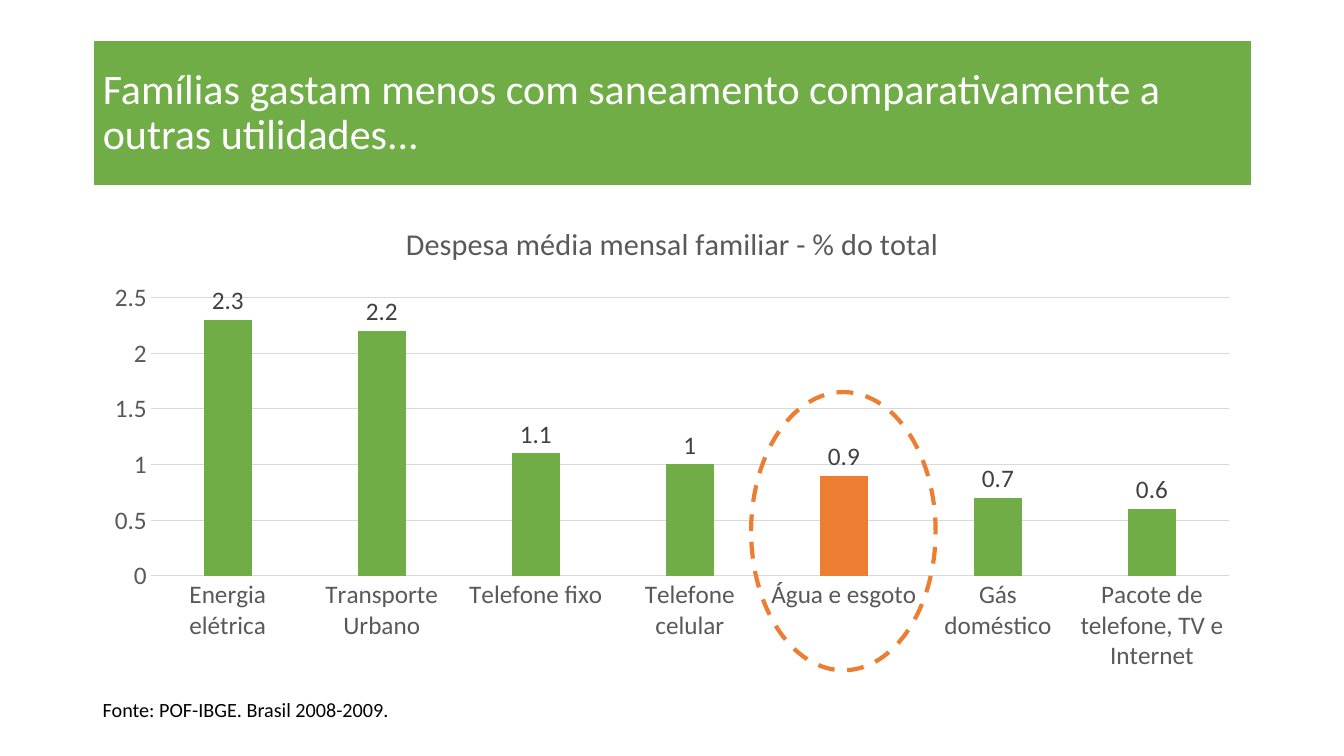
from lxml import etree
from pptx import Presentation
from pptx.chart.data import CategoryChartData
from pptx.dml.color import RGBColor
from pptx.enum.chart import XL_CHART_TYPE, XL_LABEL_POSITION, XL_TICK_MARK
from pptx.enum.dml import MSO_LINE
from pptx.enum.shapes import MSO_SHAPE
from pptx.enum.text import MSO_ANCHOR
from pptx.oxml import parse_xml
from pptx.oxml.ns import nsdecls, qn
from pptx.util import Inches, Pt

COLUMNS = XL_CHART_TYPE.COLUMN_CLUSTERED
OUTSIDE_END = XL_LABEL_POSITION.OUTSIDE_END
NO_TICKS = XL_TICK_MARK.NONE
DASH = MSO_LINE.DASH
OVAL = MSO_SHAPE.OVAL
MIDDLE, TOP = MSO_ANCHOR.MIDDLE, MSO_ANCHOR.TOP

GREEN = RGBColor(0x70, 0xAD, 0x47)
ORANGE = RGBColor(0xED, 0x7D, 0x31)
WHITE = RGBColor(0xFF, 0xFF, 0xFF)
BLACK = RGBColor(0x00, 0x00, 0x00)
AXIS_GRAY = RGBColor(0x59, 0x59, 0x59)
LABEL_GRAY = RGBColor(0x40, 0x40, 0x40)
GRID_GRAY = RGBColor(0xD9, 0xD9, 0xD9)

LEFT, CONTENT_WIDTH = 0.92, 11.5
HIGHLIGHT = "Água e esgoto"
EXPENSES = {
    "Energia elétrica": 2.3,
    "Transporte Urbano": 2.2,
    "Telefone fixo": 1.1,
    "Telefone celular": 1,
    HIGHLIGHT: 0.9,
    "Gás doméstico": 0.7,
    "Pacote de telefone, TV e Internet": 0.6,
}
PLOT_AREA = {"x": 0.05, "y": 0.2, "w": 0.93, "h": 0.58}


def set_font(font, size, color):
    for name, value in {"name": "Calibri", "size": Pt(size), "bold": False}.items():
        setattr(font, name, value)
    font.color.rgb = color


def set_line(line, color, width):
    line.color.rgb = color
    line.width = Pt(width)


def write_text(shape, text, size, color, anchor):
    frame = shape.text_frame
    margins = {"margin_left": 0.1, "margin_right": 0.1, "margin_top": 0.05, "margin_bottom": 0.05}
    for name, value in margins.items():
        setattr(frame, name, Inches(value))
    frame.word_wrap = True
    frame.vertical_anchor = anchor
    paragraph = frame.paragraphs[0]
    paragraph.text = text
    paragraph.line_spacing = 0.9
    set_font(paragraph.font, size, color)


def add_title(slide, text):
    title = slide.shapes.title
    box = {"left": LEFT, "top": 0.4, "width": CONTENT_WIDTH, "height": 1.45}
    for name, value in box.items():
        setattr(title, name, Inches(value))
    title.fill.solid()
    title.fill.fore_color.rgb = GREEN
    set_line(title.line, WHITE, 1.5)
    write_text(title, text, 30, WHITE, MIDDLE)


def place_plot_area(chart):
    """Fix the inner plot area as fractions of the chart."""
    plot_area = chart.plots[0]._element.getparent()
    for old_layout in plot_area.findall(qn("c:layout")):
        plot_area.remove(old_layout)
    layout = parse_xml(f"<c:layout {nsdecls('c')}><c:manualLayout/></c:layout>")
    settings = {"layoutTarget": "inner", "xMode": "edge", "yMode": "edge", **PLOT_AREA}
    for name, value in settings.items():
        etree.SubElement(layout[0], qn(f"c:{name}")).set("val", str(value))
    plot_area.insert(0, layout)


def format_axes(chart):
    for axis in (chart.category_axis, chart.value_axis):
        axis.major_tick_mark = axis.minor_tick_mark = NO_TICKS
        set_font(axis.tick_labels.font, 18, AXIS_GRAY)
    set_line(chart.category_axis.format.line, GRID_GRAY, 0.75)
    values = chart.value_axis
    for name, value in {"minimum_scale": 0, "maximum_scale": 2.5, "major_unit": 0.5}.items():
        setattr(values, name, value)
    values.format.line.fill.background()
    set_line(values.major_gridlines.format.line, GRID_GRAY, 0.75)


def format_columns(plot):
    plot.gap_width, plot.overlap = 219, -27
    plot.vary_by_categories = False
    series = plot.series[0]
    highlighted = series.points[list(EXPENSES).index(HIGHLIGHT)]
    for part, color in ((series, GREEN), (highlighted, ORANGE)):
        part.format.fill.solid()
        part.format.fill.fore_color.rgb = color
    labels = series.data_labels
    labels.show_value = True
    labels.position = OUTSIDE_END
    set_font(labels.font, 18, LABEL_GRAY)


def add_expense_chart(slide, title):
    data = CategoryChartData()
    data.categories = list(EXPENSES)
    data.add_series("Series 1", list(EXPENSES.values()))
    chart = slide.shapes.add_chart(
        COLUMNS, Inches(LEFT), Inches(2), Inches(CONTENT_WIDTH), Inches(4.76), data
    ).chart
    set_font(chart.font, 18, BLACK)
    chart.has_legend = False
    heading = chart.chart_title.text_frame.paragraphs[0]
    heading.text = title
    set_font(heading.runs[0].font, 21.6, AXIS_GRAY)
    chart.chart_title.include_in_layout = False
    format_axes(chart)
    format_columns(chart.plots[0])
    place_plot_area(chart)


def add_source_note(slide, text):
    note = slide.shapes.add_textbox(Inches(LEFT), Inches(6.9), Inches(9.64), Inches(0.38))
    write_text(note, text, 14.4, BLACK, TOP)


def add_highlight_ring(slide):
    ring = slide.shapes.add_shape(OVAL, Inches(7.45), Inches(3.89), Inches(1.83), Inches(2.76))
    ring.shadow.inherit = False
    ring.fill.background()
    set_line(ring.line, ORANGE, 3)
    ring.line.dash_style = DASH


def main():
    presentation = Presentation()
    presentation.slide_width = Inches(13.33)
    presentation.slide_height = Inches(7.5)
    slide = presentation.slides.add_slide(presentation.slide_layouts.get_by_name("Title Only"))
    add_title(slide, "Famílias gastam menos com saneamento comparativamente a outras utilidades...")
    slide.shapes.title.text_frame.paragraphs[0].alignment = PP_LEFT
    add_expense_chart(slide, "Despesa média mensal familiar - % do total")
    add_source_note(slide, "Fonte: POF-IBGE. Brasil 2008-2009.")
    add_highlight_ring(slide)
    presentation.save("out.pptx")


from pptx.enum.text import PP_ALIGN
PP_LEFT = PP_ALIGN.LEFT

if __name__ == "__main__":
    main()
